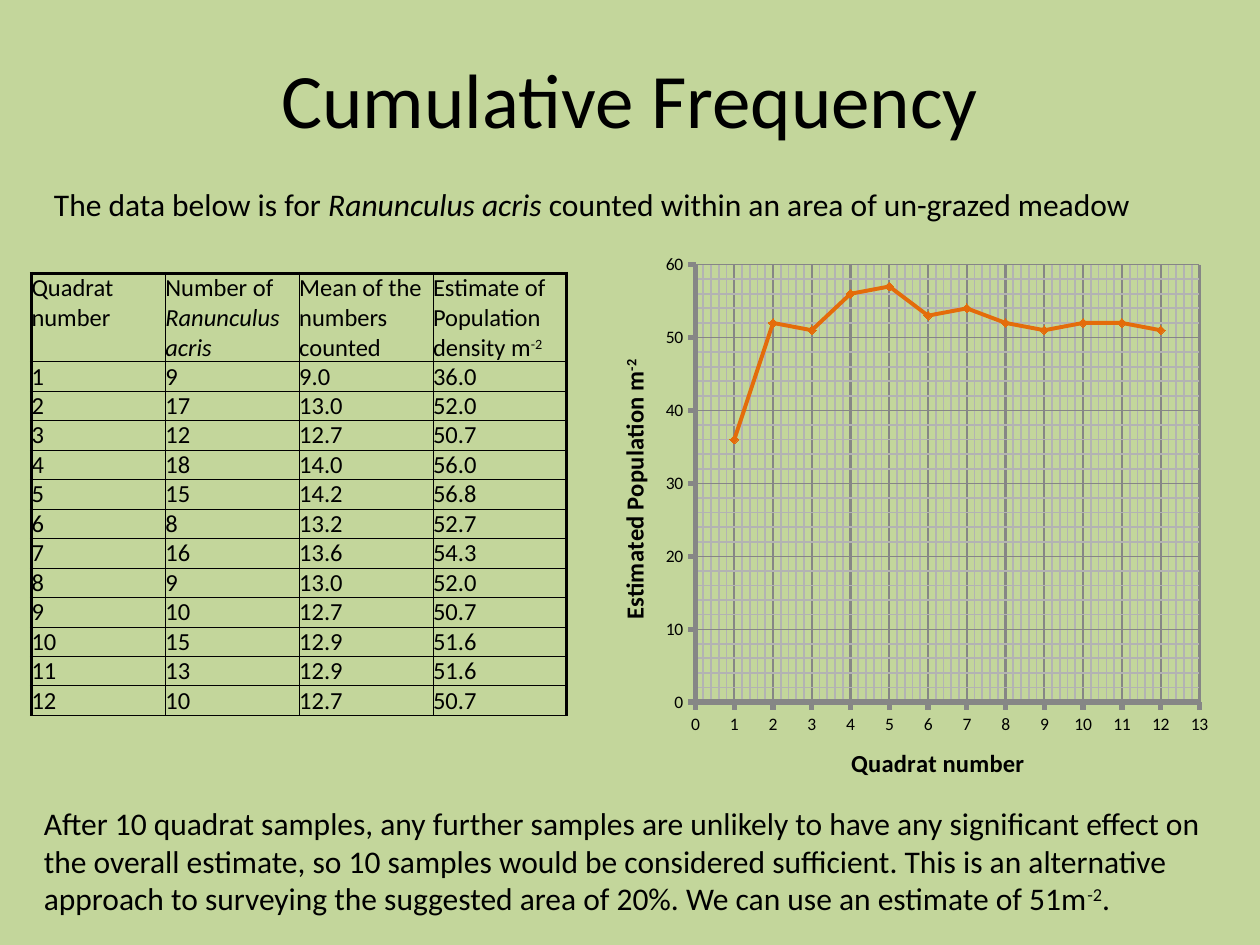
from lxml.etree import SubElement
from pptx import Presentation
from pptx.chart.data import XyChartData
from pptx.dml.color import RGBColor
from pptx.enum.chart import XL_CHART_TYPE, XL_MARKER_STYLE, XL_TICK_MARK
from pptx.enum.text import MSO_ANCHOR, PP_ALIGN
from pptx.oxml import parse_xml
from pptx.oxml.ns import nsdecls, qn
from pptx.util import Inches, Pt

FONT = "Calibri"
COLORS = {
    "background": "C3D69B",
    "text": "000000",
    "series": "E46C0A",
    "axis": "868686",
    "minor_grid": "B3B3B3",
}
PLAIN, ITALIC, SUPER = "plain", "italic", "super"

HEADERS = [
    [("Quadrat number", PLAIN)],
    [("Number of ", PLAIN), ("Ranunculus acris", ITALIC)],
    [("Mean of the numbers counted", PLAIN)],
    [("Estimate of Population density m", PLAIN), ("-2", SUPER)],
]
COUNTS = [9, 17, 12, 18, 15, 8, 16, 9, 10, 15, 13, 10]
MEANS = [9.0, 13.0, 12.7, 14.0, 14.2, 13.2, 13.6, 13.0, 12.7, 12.9, 12.9, 12.7]
DENSITIES = [36.0, 52.0, 50.7, 56.0, 56.8, 52.7, 54.3, 52.0, 50.7, 51.6, 51.6, 50.7]


def color(name):
    return RGBColor.from_string(COLORS[name])


def style_font(font, size, bold=False):
    font.name, font.size, font.bold = FONT, Pt(size), bold
    font.color.rgb = color("text")


def write_runs(text_frame, pieces, size, bold=False):
    """Fill the first paragraph with (text, style) pieces."""
    paragraph = text_frame.paragraphs[0]
    style_font(paragraph.font, size, bold)
    for text, style in pieces:
        run = paragraph.add_run()
        run.text = text
        if style == ITALIC:
            run.font.italic = True
        elif style == SUPER:
            run.font._element.set("baseline", "30000")


def add_text(slide, box, pieces, size, wrap=True):
    text_frame = slide.shapes.add_textbox(*map(Inches, box)).text_frame
    text_frame.word_wrap = wrap
    write_runs(text_frame, pieces, size)
    return text_frame


def set_borders(cell, widths):
    """Draw cell borders; widths are points for left, right, top and bottom."""
    properties = cell._tc.get_or_add_tcPr()
    for index, (side, width) in enumerate(zip("LRTB", widths)):
        properties.insert(index, parse_xml(
            f'<a:ln{side} {nsdecls("a")} w="{Pt(width)}"><a:solidFill>'
            f'<a:srgbClr val="{COLORS["text"]}"/></a:solidFill></a:ln{side}>'))


def add_quadrat_table(slide):
    rows = [HEADERS]
    for number, (count, mean, density) in enumerate(zip(COUNTS, MEANS, DENSITIES), 1):
        rows.append([[(str(value), PLAIN)] for value in (number, count, mean, density)])
    last = len(HEADERS) - 1
    table = slide.shapes.add_table(
        len(rows), len(HEADERS), Inches(0.25), Inches(2.17), Inches(4.25), Inches(3.5)).table
    table.first_row = table.horz_banding = False
    for r, row in enumerate(rows):
        table.rows[r].height = Inches(0.21 if r else 0.62)
        for c, pieces in enumerate(row):
            cell = table.cell(r, c)
            cell.margin_left = cell.margin_right = cell.margin_top = cell.margin_bottom = 0
            cell.fill.background()
            write_runs(cell.text_frame, pieces, 14)
            set_borders(cell, (0.5 if c else 2, 2 if c == last else 0.5, 0.5 if r else 2, 0.5))


def place_in_chart(element, **fractions):
    """Give a chart part a manual layout in fractions of the chart."""
    for old in element.findall(qn("c:layout")):
        element.remove(old)
    layout = parse_xml(f'<c:layout {nsdecls("c")}/>')
    element.insert(0 if element.find(qn("c:tx")) is None else 1, layout)
    manual = SubElement(layout, qn("c:manualLayout"))
    if "w" in fractions:
        SubElement(manual, qn("c:layoutTarget")).set("val", "inner")
    for edge in "xy":
        SubElement(manual, qn(f"c:{edge}Mode")).set("val", "edge")
    for key, value in fractions.items():
        SubElement(manual, qn(f"c:{key}")).set("val", str(value))


def style_line(line, name, width):
    line.color.rgb = color(name)
    line.width = Pt(width)


def style_axis(axis, maximum, major, minor, grid_width, title, title_at):
    axis.minimum_scale, axis.maximum_scale = 0, maximum
    axis.major_unit, axis.minor_unit = major, minor
    axis.has_major_gridlines = axis.has_minor_gridlines = True
    axis.major_tick_mark = XL_TICK_MARK.OUTSIDE
    axis.minor_tick_mark = XL_TICK_MARK.NONE
    axis.tick_labels.number_format = "0"
    axis.tick_labels.number_format_is_linked = False
    style_line(axis.format.line, "axis", 3)
    style_line(axis.major_gridlines.format.line, "axis", grid_width)
    minor_grid = axis._element.find(qn("c:minorGridlines"))
    minor_grid.append(parse_xml(
        f'<c:spPr {nsdecls("c", "a")}><a:ln w="{Pt(1)}"><a:solidFill>'
        f'<a:srgbClr val="{COLORS["minor_grid"]}"/></a:solidFill></a:ln></c:spPr>'))
    write_runs(axis.axis_title.text_frame, title, 14, bold=True)
    place_in_chart(axis.axis_title._element, **title_at)


def add_density_chart(slide):
    data = XyChartData()
    points = data.add_series("Series 1")
    for number, density in enumerate(DENSITIES, 1):
        points.add_data_point(number, round(density))
    chart = slide.shapes.add_chart(
        XL_CHART_TYPE.XY_SCATTER_LINES, Inches(4.67), Inches(1.92),
        Inches(5), Inches(4.51), data).chart
    chart.has_legend = chart.has_title = False
    style_font(chart.font, 10)
    chart.plots[0].vary_by_categories = False
    place_in_chart(chart._chartSpace.chart.plotArea, x=0.17, y=0.04, w=0.8, h=0.77)
    style_axis(chart.category_axis, 13, 1, 0.2, 1.25,
               [("Quadrat number", PLAIN)], {"x": 0.41, "y": 0.88})
    density_axis = chart.value_axis
    style_axis(density_axis, 60, 10, 2, 0.75,
               [("Estimated Population m", PLAIN), ("-2", SUPER)], {"x": 0.04, "y": 0.2})
    density_axis.axis_title.text_frame._txBody.bodyPr.set("rot", "-5400000")

    series = chart.plots[0].series[0]
    series.smooth = False
    style_line(series.format.line, "series", 2.25)
    series.marker.style, series.marker.size = XL_MARKER_STYLE.DIAMOND, 5
    series.marker.format.fill.solid()
    series.marker.format.fill.fore_color.rgb = color("series")
    style_line(series.marker.format.line, "series", 0.75)


def main():
    presentation = Presentation()
    presentation.slide_width, presentation.slide_height = Inches(10), Inches(7.5)
    slide = presentation.slides.add_slide(presentation.slide_layouts[6])
    slide.background.fill.solid()
    slide.background.fill.fore_color.rgb = color("background")

    heading = add_text(slide, (0.5, 0.3, 9, 0.95), [("Cumulative Frequency", PLAIN)], 44)
    heading.vertical_anchor = MSO_ANCHOR.MIDDLE
    heading.paragraphs[0].alignment = PP_ALIGN.CENTER
    add_text(slide, (0.33, 1.42, 8.77, 0.4), [
        ("The data below is for ", PLAIN),
        ("Ranunculus acris ", ITALIC),
        ("counted within an area of un-grazed meadow", PLAIN),
    ], 18, wrap=False)
    add_density_chart(slide)
    add_quadrat_table(slide)
    add_text(slide, (0.25, 6.33, 9.5, 1.01), [
        ("After 10 quadrat samples, any further samples are unlikely to have any significant "
         "effect on the overall estimate, so 10 samples would be considered sufficient. This is "
         "an alternative approach to surveying the suggested area of 20%. We can use an estimate "
         "of 51m", PLAIN),
        ("-2", SUPER),
        (".", PLAIN),
    ], 18)
    presentation.save("out.pptx")


if __name__ == "__main__":
    main()
